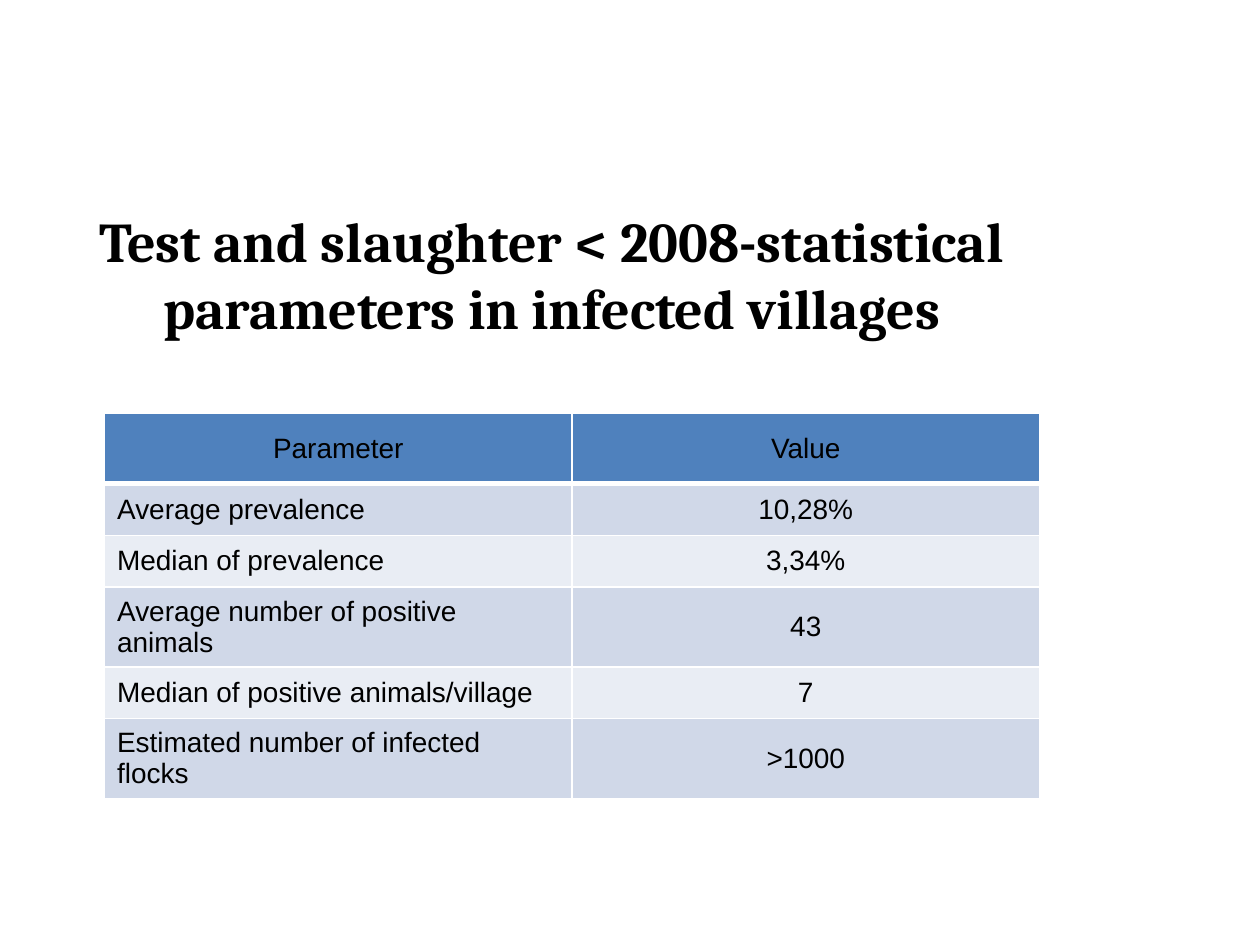
import pptx
import pptx.dml.color
import pptx.enum.text
import pptx.oxml
import pptx.oxml.ns
import pptx.util
from pptx.util import Inches

CENTER = pptx.enum.text.PP_ALIGN.CENTER
LEFT = pptx.enum.text.PP_ALIGN.LEFT
MIDDLE = pptx.enum.text.MSO_ANCHOR.MIDDLE


def color(value):
    return pptx.dml.color.RGBColor.from_string(value)


class SlideBuilder:
    """Holds the style and the current slide, and adds its elements."""

    text_color = "000000"
    border_color = "FFFFFF"
    header_fill = "4F81BD"
    band_fills = ("D0D8E8", "E9EDF4")

    def __init__(self, slide):
        self.slide = slide

    def add_text(self, frame, text, font, size, alignment, bold=False):
        paragraph = frame.paragraphs[0]
        paragraph.alignment = alignment
        run = paragraph.add_run()
        run.text = text
        run.font.name = font
        run.font.size = pptx.util.Pt(size)
        run.font.bold = bold
        run.font.color.rgb = color(self.text_color)

    def title(self, text, left, top, width, height):
        shape = self.slide.shapes.add_textbox(left, top, width, height)
        shape.text_frame.word_wrap = True
        shape.text_frame.vertical_anchor = MIDDLE
        self.add_text(shape.text_frame, text, "Cambria", 32, CENTER, bold=True)

    def borders(self, cell, top, bottom):
        properties = cell._tc.get_or_add_tcPr()
        widths = {"lnL": 1, "lnR": 1, "lnT": top, "lnB": bottom}
        for position, (side, width) in enumerate(widths.items()):
            line = pptx.oxml.parse_xml(
                f'<a:{side} {pptx.oxml.ns.nsdecls("a")} w="{pptx.util.Pt(width)}">'
                f'<a:solidFill><a:srgbClr val="{self.border_color}"/></a:solidFill>'
                f'</a:{side}>'
            )
            properties.insert(position, line)

    def table(self, rows, left, top, column_width, header_height, row_height):
        columns = len(rows[0])
        height = header_height + row_height * (len(rows) - 1)
        frame = self.slide.shapes.add_table(
            len(rows), columns, left, top, column_width * columns, height
        )
        for column in frame.table.columns:
            column.width = column_width
        for row_index, values in enumerate(rows):
            header = row_index == 0
            frame.table.rows[row_index].height = header_height if header else row_height
            fill = self.header_fill if header else self.band_fills[(row_index - 1) % 2]
            for column_index, text in enumerate(values):
                cell = frame.table.cell(row_index, column_index)
                cell.vertical_anchor = MIDDLE
                cell.fill.solid()
                cell.fill.fore_color.rgb = color(fill)
                self.borders(cell, 3 if row_index == 1 else 1, 3 if header else 1)
                alignment = CENTER if header or column_index else LEFT
                self.add_text(cell.text_frame, text, "Arial", 16, alignment)


def main():
    presentation = pptx.Presentation()
    presentation.slide_width = Inches(10)
    presentation.slide_height = Inches(7.5)
    builder = SlideBuilder(presentation.slides.add_slide(presentation.slide_layouts[6]))
    builder.title(
        "Test and slaughter < 2008-statistical parameters in infected villages",
        Inches(0.28), Inches(1.86), Inches(8.2), Inches(0.63),
    )
    rows = [
        ("Parameter", "Value"),
        ("Average prevalence", "10,28%"),
        ("Median of prevalence", "3,34%"),
        ("Average number of positive animals", "43"),
        ("Median of positive animals/village", "7"),
        ("Estimated number of infected flocks", ">1000"),
    ]
    builder.table(
        rows, Inches(0.83), Inches(3.28), Inches(3.71), Inches(0.56), Inches(0.41)
    )
    presentation.save("out.pptx")


if __name__ == "__main__":
    main()
